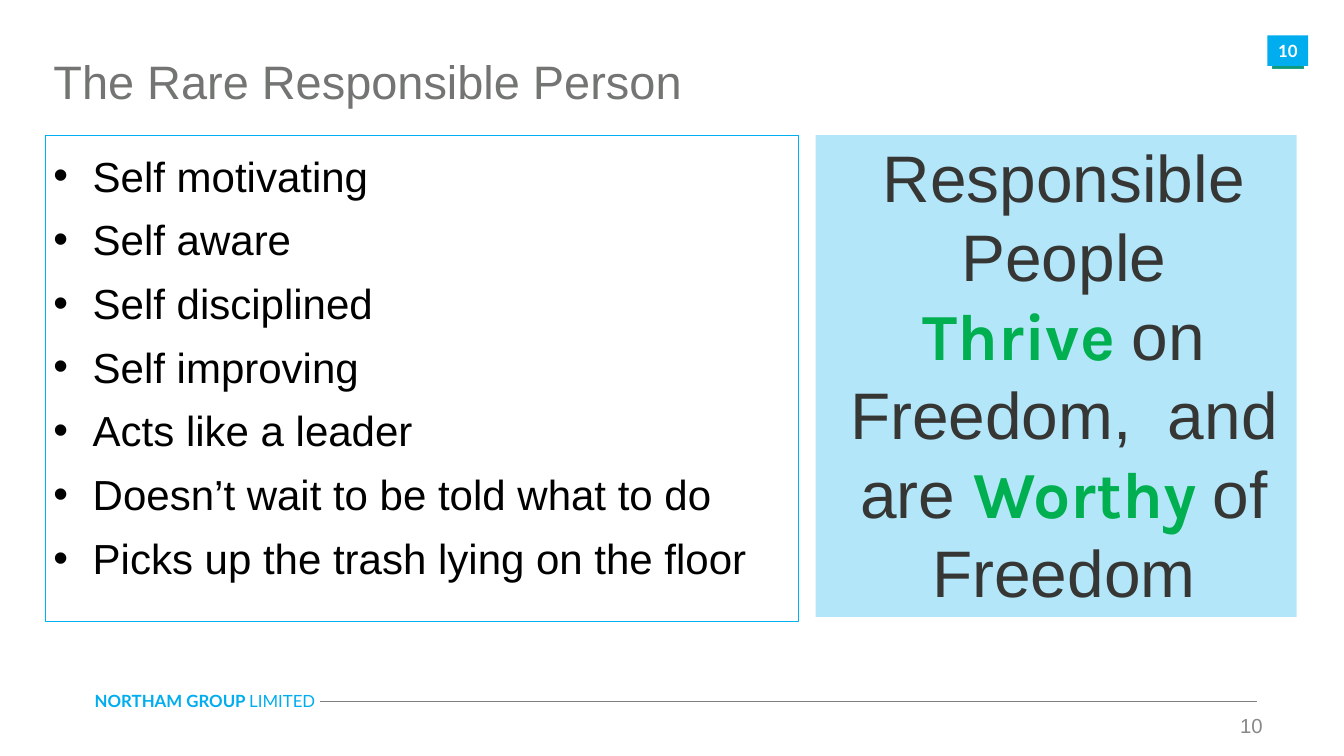
from lxml import etree
from pptx import Presentation
from pptx.dml.color import RGBColor
from pptx.enum.shapes import MSO_CONNECTOR, MSO_SHAPE
from pptx.enum.text import MSO_ANCHOR, MSO_AUTO_SIZE, PP_ALIGN
from pptx.oxml.ns import qn
from pptx.util import Pt

RECTANGLE = MSO_SHAPE.RECTANGLE
STRAIGHT = MSO_CONNECTOR.STRAIGHT
TOP, MIDDLE = MSO_ANCHOR.TOP, MSO_ANCHOR.MIDDLE
LEFT, CENTER = PP_ALIGN.LEFT, PP_ALIGN.CENTER
TITLE_ONLY = 5

EMU_PER_PX = 9144  # 100 px to the inch
BLUE, GREEN, DARK = "00ADEF", "00AF50", "363735"

TRAITS = [
    "Self motivating",
    "Self aware",
    "Self disciplined",
    "Self improving",
    "Acts like a leader",
    "Doesn’t wait to be told what to do",
    "Picks up the trash lying on the floor",
]


def px(value):
    return value * EMU_PER_PX


def color(hex_value):
    return RGBColor.from_string(hex_value)


def place(shape, left, top, width, height):
    shape.left, shape.top = px(left), px(top)
    shape.width, shape.height = px(width), px(height)


def set_frame(shape, insets=(0, 0, 0, 0), anchor=TOP):
    frame = shape.text_frame
    frame.word_wrap = True
    frame.auto_size = MSO_AUTO_SIZE.NONE
    frame.vertical_anchor = anchor
    (frame.margin_left, frame.margin_top,
     frame.margin_right, frame.margin_bottom) = map(px, insets)
    return frame


def add_run(paragraph, text, size, hex_value, font="Arial", bold=False):
    run = paragraph.add_run()
    run.text = text
    run.font.name = font
    run.font.size = Pt(size)
    run.font.bold = bold
    run.font.color.rgb = color(hex_value)


def format_paragraph(paragraph, align=LEFT, indent=0, hanging=0, spacing=1.0):
    paragraph.alignment = align
    paragraph.line_spacing = spacing
    properties = paragraph._p.get_or_add_pPr()
    properties.set("marL", str(px(indent)))
    properties.set("indent", str(px(-hanging)))
    return properties


def add_bullet(properties, hex_value):
    bullet_color = etree.SubElement(properties, qn("a:buClr"))
    etree.SubElement(bullet_color, qn("a:srgbClr"), val=hex_value)
    etree.SubElement(properties, qn("a:buFont"), typeface="Arial")
    etree.SubElement(properties, qn("a:buChar"), char="•")


def add_box(slide, left, top, width, height, fill=None, line=None):
    shape = slide.shapes.add_shape(RECTANGLE, px(left), px(top), px(width), px(height))
    shape.shadow.inherit = False
    if fill:
        shape.fill.solid()
        shape.fill.fore_color.rgb = color(fill)
    else:
        shape.fill.background()
    if line:
        shape.line.color.rgb = color(line)
        shape.line.width = Pt(0.75)
    else:
        shape.line.fill.background()
    return shape


def add_text_box(slide, left, top, width, height):
    return slide.shapes.add_textbox(px(left), px(top), px(width), px(height))


def add_page_badge(slide):
    accent = add_box(slide, 2524, 73, 62, 62, line="1EA185")
    accent.fill.gradient()
    accent.fill.gradient_angle = 270
    for stop, hex_value in zip(accent.fill.gradient_stops, ("4BAC93", "0D997B")):
        stop.color.rgb = color(hex_value)

    badge = add_box(slide, 2514, 70, 81, 61, fill=BLUE)
    paragraph = set_frame(badge, (20, 10, 20, 10), MIDDLE).paragraphs[0]
    format_paragraph(paragraph, CENTER)
    add_run(paragraph, "10", 24, "FFFFFF", "Lato", True)


def add_footer(slide):
    name_box = add_text_box(slide, 178, 1365, 493, 50)
    paragraph = set_frame(name_box, (10, 5, 10, 5)).paragraphs[0]
    add_run(paragraph, "NORTHAM GROUP ", 24, BLUE, "Lato", True)
    add_run(paragraph, "LIMITED", 24, BLUE, "Lato")

    rule = slide.shapes.add_connector(STRAIGHT, px(634), px(1392), px(2494), px(1392))
    rule.line.color.rgb = color("7F7F7F")
    rule.line.width = Pt(1)
    etree.SubElement(rule._element.spPr, qn("a:effectLst"))

    number_box = add_text_box(slide, 2453, 1414, 60, 39)
    paragraph = set_frame(number_box).paragraphs[0]
    format_paragraph(paragraph, indent=7, spacing=1.03)
    add_run(paragraph, "10", 29, "888888")


def add_title(slide):
    title = slide.shapes.title
    place(title, 103, 101, 2185, 152)
    paragraph = set_frame(title, (0, 4, 0, 0)).paragraphs[0]
    format_paragraph(paragraph, indent=3)
    add_run(paragraph, "The Rare Responsible Person", 67, "737572")


def add_trait_list(slide):
    box = add_box(slide, 90, 268, 1494, 964, line="00B0F0")
    frame = set_frame(box, (0, 30, 0, 0))
    for index, trait in enumerate(TRAITS):
        paragraph = frame.add_paragraph() if index else frame.paragraphs[0]
        properties = format_paragraph(paragraph, indent=94, hanging=78)
        if index:
            paragraph.space_before = Pt(19)
        add_bullet(properties, "000000")
        add_run(paragraph, trait, 60, "000000")


def add_message_panel(slide):
    panel = add_box(slide, 1618, 268, 954, 956, fill="B3E6F9")
    frame = set_frame(panel, (0, 3, 0, 0))
    opening, message = frame.paragraphs[0], frame.add_paragraph()
    for paragraph in (opening, message):
        format_paragraph(paragraph, CENTER, indent=31, hanging=1)
    add_run(opening, "Responsible People", 94, DARK)
    add_run(message, "Thrive ", 94, GREEN, "Karla", True)
    add_run(message, "on Freedom,  and are ", 94, DARK)
    add_run(message, "Worthy ", 94, GREEN, "Karla", True)
    add_run(message, "of Freedom", 94, DARK)


def main():
    presentation = Presentation()
    presentation.slide_width, presentation.slide_height = px(2666), px(1500)
    slide = presentation.slides.add_slide(presentation.slide_layouts[TITLE_ONLY])

    # Page furniture
    add_page_badge(slide)
    add_footer(slide)

    # Content
    add_title(slide)
    add_message_panel(slide)
    add_trait_list(slide)

    presentation.save("out.pptx")


if __name__ == "__main__":
    main()
